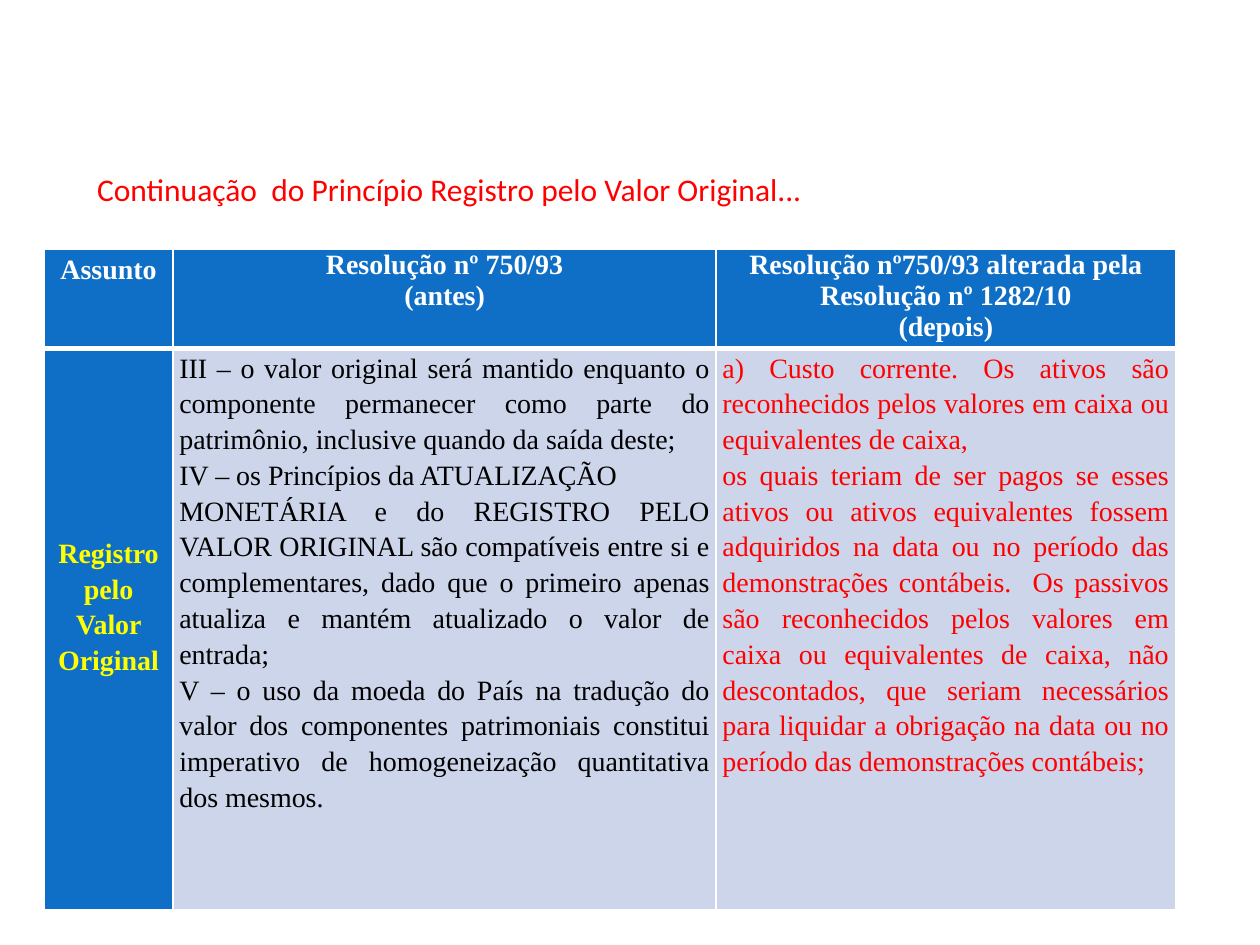
from lxml.etree import SubElement
from pptx import Presentation
from pptx.dml.color import RGBColor
from pptx.enum.text import MSO_ANCHOR, PP_ALIGN
from pptx.oxml.ns import qn
from pptx.util import Inches, Pt

BLUE, PALE, WHITE = "0F6FC6", "CCD5EA", "FFFFFF"
RED, YELLOW, BLACK = "FF0000", "FFFF00", "000000"

HEADS = [
    ["Assunto"],
    ["Resolução nº 750/93", "(antes)"],
    ["Resolução nº750/93 alterada pela", "Resolução nº 1282/10", "(depois)"],
]
TOPIC = ["Registro pelo Valor Original"]
BEFORE = [
    "III – o valor original será mantido enquanto o componente permanecer "
    "como parte do patrimônio, inclusive quando da saída deste;",
    "IV – os Princípios da ATUALIZAÇÃO",
    "MONETÁRIA e do REGISTRO PELO VALOR ORIGINAL são compatíveis entre si e "
    "complementares, dado que o primeiro apenas atualiza e mantém atualizado "
    "o valor de entrada;",
    "V – o uso da moeda do País na tradução do valor dos componentes "
    "patrimoniais constitui imperativo de homogeneização quantitativa dos mesmos.",
]
AFTER = [
    "a) Custo corrente. Os ativos são reconhecidos pelos valores em caixa ou "
    "equivalentes de caixa,",
    "os quais teriam de ser pagos se esses ativos ou ativos equivalentes "
    "fossem adquiridos na data ou no período das demonstrações contábeis.  "
    "Os passivos são reconhecidos pelos valores em caixa ou equivalentes de "
    "caixa, não descontados, que seriam necessários para liquidar a obrigação "
    "na data ou no período das demonstrações contábeis;",
]


def rgb(code):
    return RGBColor.from_string(code)


def style(par, face, size, color, bold=False):
    for run in par.runs:
        font = run.font
        font.name, font.size, font.bold = face, Pt(size), bold
        font.color.rgb = rgb(color)


def edge(cell, top, bottom):
    props = cell._tc.get_or_add_tcPr()
    for tag, width in (("lnL", 1), ("lnR", 1), ("lnT", top), ("lnB", bottom)):
        line = SubElement(props, qn("a:" + tag), w=str(Pt(width)))
        fill = SubElement(line, qn("a:solidFill"))
        SubElement(fill, qn("a:srgbClr"), val=WHITE)


def write(cell, lines, color, bold, align, gap):
    cell.margin_left = cell.margin_right = Inches(0.05)
    cell.margin_top = cell.margin_bottom = 0
    frame = cell.text_frame
    frame.text = "\n".join(lines)
    for par in frame.paragraphs:
        par.alignment, par.line_spacing = align, gap
        style(par, "Times New Roman", 16, color, bold)


def add_title(slide, left, top, width, height):
    title = slide.shapes.title
    title.left, title.top = Inches(left), Inches(top)
    title.width, title.height = Inches(width), Inches(height)
    frame = title.text_frame
    frame.text = "Continuação  do Princípio Registro pelo Valor Original..."
    frame.word_wrap = True
    frame.vertical_anchor = MSO_ANCHOR.TOP
    par = frame.paragraphs[0]
    par.alignment = PP_ALIGN.LEFT
    style(par, "Calibri", 18, RED)


def add_grid(slide, left, top, width, height):
    grid = slide.shapes.add_table(
        2, 3, Inches(left), Inches(top), Inches(width), Inches(height)).table
    for col, share in zip(grid.columns, (0.114, 0.48, 0.406)):
        col.width = Inches(width * share)
    for row, share in zip(grid.rows, (0.15, 0.85)):
        row.height = Inches(height * share)

    # Header row
    for col, lines in enumerate(HEADS):
        cell = grid.cell(0, col)
        write(cell, lines, WHITE, True, PP_ALIGN.CENTER, 1.0 if col else 1.15)
        edge(cell, 1, 3)
        cell.fill.solid()
        cell.fill.fore_color.rgb = rgb(BLUE)

    # Topic and the two versions
    body = [
        (TOPIC, YELLOW, True, PP_ALIGN.CENTER, BLUE),
        (BEFORE, BLACK, False, PP_ALIGN.JUSTIFY, PALE),
        (AFTER, RED, False, PP_ALIGN.JUSTIFY, PALE),
    ]
    for col, (lines, color, bold, align, back) in enumerate(body):
        cell = grid.cell(1, col)
        write(cell, lines, color, bold, align, 1.15)
        edge(cell, 3, 1)
        cell.fill.solid()
        cell.fill.fore_color.rgb = rgb(back)

    # The topic sits a little above the middle
    topic = grid.cell(1, 0)
    topic.vertical_anchor = MSO_ANCHOR.MIDDLE
    topic.margin_bottom = Inches(0.38)


def main():
    deck = Presentation()
    deck.slide_width, deck.slide_height = Inches(10), Inches(7.5)
    slide = deck.slides.add_slide(deck.slide_layouts[5])
    add_grid(slide, 0.35, 1.98, 8.98, 5.24)
    add_title(slide, 0.67, 1.3, 5.98, 0.4)
    deck.save("out.pptx")


if __name__ == "__main__":
    main()
